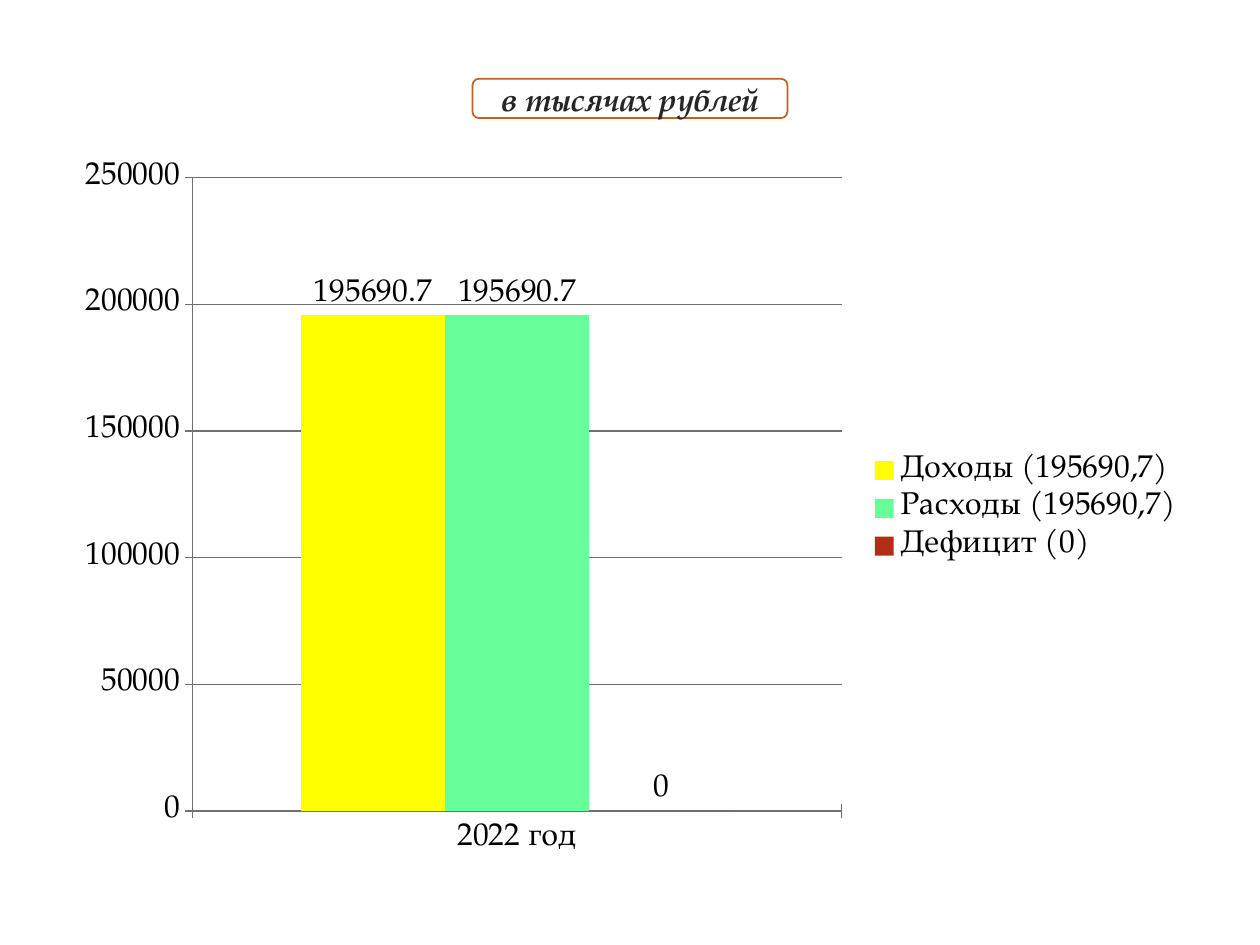
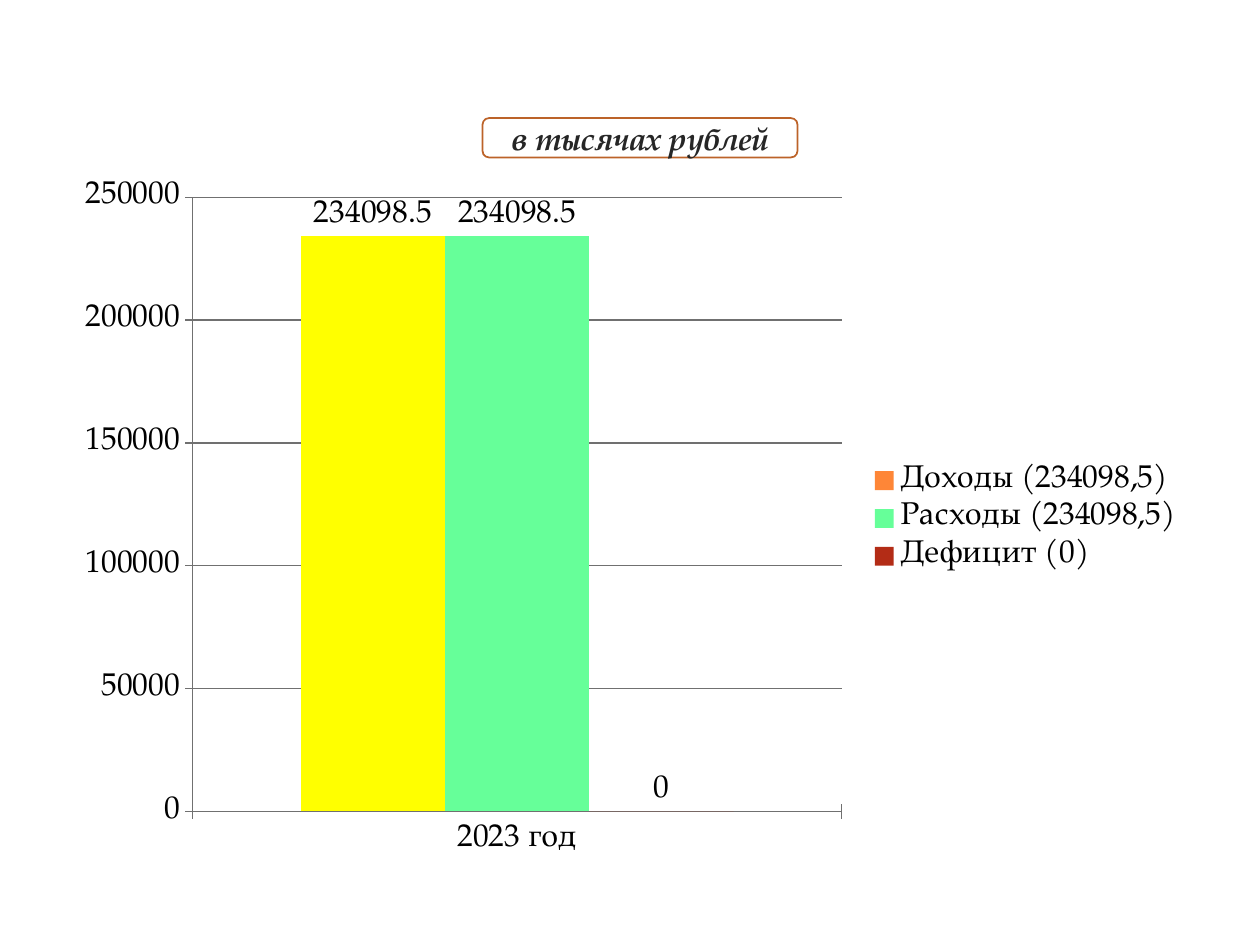
from pptx import Presentation
from pptx.chart.data import CategoryChartData
from pptx.dml.color import RGBColor
from pptx.enum.chart import XL_CHART_TYPE, XL_LABEL_POSITION, XL_LEGEND_POSITION, XL_TICK_MARK
from pptx.enum.shapes import MSO_SHAPE
from pptx.enum.text import MSO_ANCHOR, PP_ALIGN
from pptx.util import Pt

YELLOW = RGBColor(0xFF, 0xFF, 0x00)
ORANGE = RGBColor(0xFE, 0x86, 0x37)
GREEN = RGBColor(0x66, 0xFF, 0x99)
RED = RGBColor(0xB3, 0x2C, 0x16)
BROWN = RGBColor(0xBC, 0x63, 0x29)
DARK = RGBColor(0x26, 0x26, 0x26)
BLACK = RGBColor(0, 0, 0)
GRAY = RGBColor(0x70, 0x70, 0x70)

# Content: series are (name, value, legend colour, bar colour)
UNIT = "в тысячах рублей"
BUDGETS = [
    {
        "year": "2022 год",
        "series": [
            ("Доходы (195690,7)", 195690.7, YELLOW, YELLOW),
            ("Расходы (195690,7)", 195690.7, GREEN, GREEN),
            ("Дефицит (0)", 0, RED, RED),
        ],
        "chart_top": 84.24,
        "unit_at": (270, 45),
    },
    {
        "year": "2023 год",
        "series": [
            ("Доходы (234098,5)", 234098.5, ORANGE, YELLOW),
            ("Расходы (234098,5)", 234098.5, GREEN, GREEN),
            ("Дефицит (0)", 0, RED, RED),
        ],
        "chart_top": 95.76,
        "unit_at": (275.76, 67.5),
    },
]

# Shared formats
SLIDE_SIZE = (720, 540)
CHART_LEFT, CHART_WIDTH, CHART_BOTTOM = 36, 648, 496.8
UNIT_SIZE = (180, 22.5)
BASE_FONT = {"name": "TeX Gyre Pagella", "size": Pt(18)}
UNIT_FONT = {**BASE_FONT, "bold": True, "italic": True}
LABEL_FORMAT = {"show_value": True, "position": XL_LABEL_POSITION.OUTSIDE_END}


def apply(target, values):
    for attribute, value in values.items():
        setattr(target, attribute, value)


def paint(fill, color):
    fill.solid()
    fill.fore_color.rgb = color


def draw_line(line, color, width):
    line.color.rgb = color
    line.width = Pt(width)


def add_budget_chart(slide, budget):
    data = CategoryChartData()
    data.categories = [budget["year"]]
    for name, value, *_ in budget["series"]:
        data.add_series(name, [value])
    top = budget["chart_top"]
    chart = slide.shapes.add_chart(
        XL_CHART_TYPE.COLUMN_CLUSTERED, Pt(CHART_LEFT), Pt(top),
        Pt(CHART_WIDTH), Pt(CHART_BOTTOM - top), data).chart
    apply(chart, {"has_title": False, "has_legend": True})
    apply(chart.font, BASE_FONT)
    chart.font.color.rgb = BLACK
    apply(chart.legend, {"position": XL_LEGEND_POSITION.RIGHT, "include_in_layout": False})

    # Axes and gridlines
    for axis in (chart.category_axis, chart.value_axis):
        axis.major_tick_mark = XL_TICK_MARK.CROSS
        draw_line(axis.format.line, GRAY, 0.75)
    chart.value_axis.has_major_gridlines = True
    draw_line(chart.value_axis.major_gridlines.format.line, GRAY, 0.75)

    # Columns and their values
    columns = chart.plots[0]
    apply(columns, {"gap_width": 150, "overlap": 0, "vary_by_categories": False})
    for series, (_, _, legend_color, bar_color) in zip(columns.series, budget["series"]):
        series.invert_if_negative = False
        paint(series.format.fill, legend_color)
        if bar_color != legend_color:
            paint(series.points[0].format.fill, bar_color)
        apply(series.data_labels, LABEL_FORMAT)


def add_unit_badge(slide, position):
    badge = slide.shapes.add_shape(
        MSO_SHAPE.ROUNDED_RECTANGLE, *map(Pt, position + UNIT_SIZE))
    badge.shadow.inherit = False
    badge.fill.background()
    draw_line(badge.line, BROWN, 1)
    apply(badge.text_frame, {"vertical_anchor": MSO_ANCHOR.MIDDLE, "word_wrap": True})
    paragraph = badge.text_frame.paragraphs[0]
    paragraph.alignment = PP_ALIGN.CENTER
    run = paragraph.add_run()
    run.text = UNIT
    apply(run.font, UNIT_FONT)
    run.font.color.rgb = DARK


def main():
    deck = Presentation()
    deck.slide_width, deck.slide_height = map(Pt, SLIDE_SIZE)
    for budget in BUDGETS:
        slide = deck.slides.add_slide(deck.slide_layouts[6])
        add_budget_chart(slide, budget)
        add_unit_badge(slide, budget["unit_at"])
    deck.save("out.pptx")


if __name__ == "__main__":
    main()
